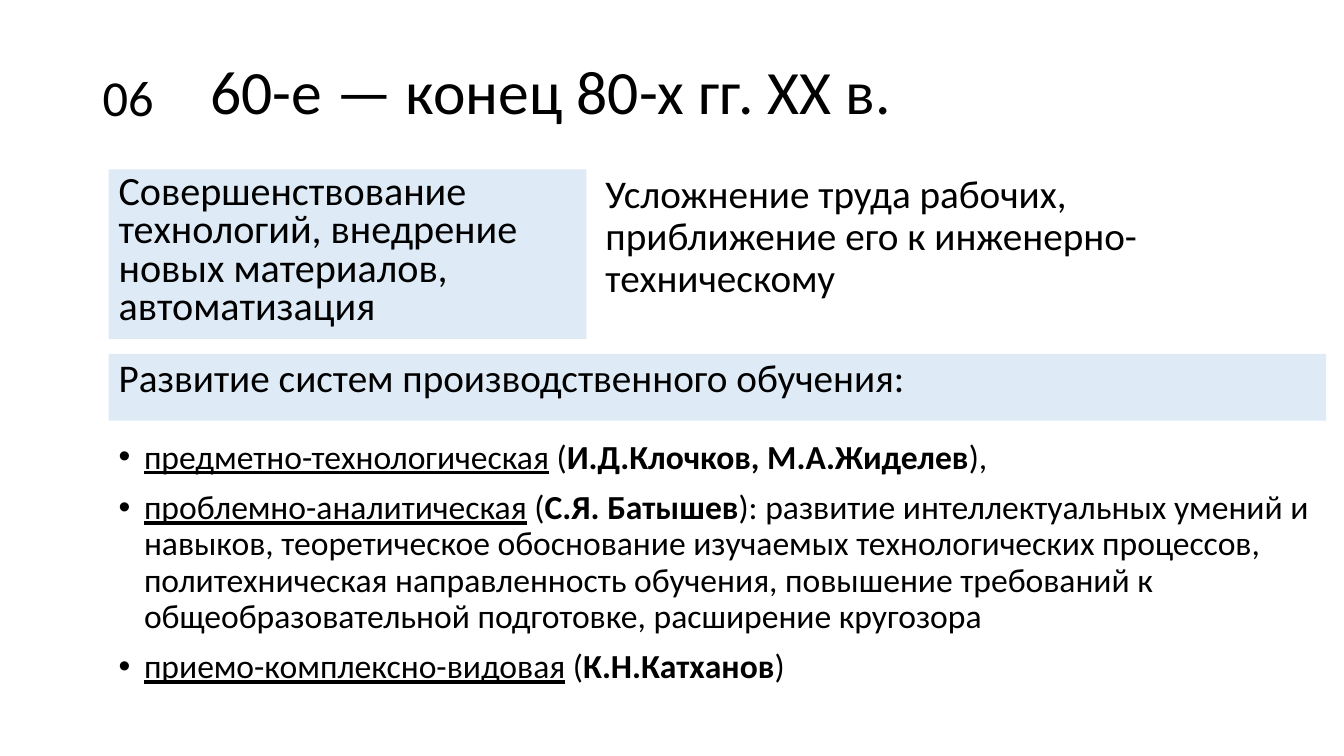
"""Build the slide on industrial training from the 1960s to the 1980s."""
from dataclasses import dataclass

from lxml import etree
from pptx import Presentation
from pptx.dml.color import RGBColor
from pptx.enum.shapes import MSO_SHAPE
from pptx.enum.text import MSO_ANCHOR, MSO_AUTO_SIZE, PP_ALIGN
from pptx.oxml.ns import qn
from pptx.util import Cm, Pt

RECT = MSO_SHAPE.RECTANGLE
TOP, MIDDLE = MSO_ANCHOR.TOP, MSO_ANCHOR.MIDDLE
LEFT = PP_ALIGN.LEFT
FIXED = MSO_AUTO_SIZE.NONE
TITLE_ONLY = 5


@dataclass(frozen=True)
class Theme:
    font: str = "Calibri"
    ink: RGBColor = RGBColor(0, 0, 0)
    band: RGBColor = RGBColor(0xDE, 0xEB, 0xF7)
    title: float = 44
    mark: float = 36
    lead: float = 28
    dense: float = 28.7
    item: float = 24


THEME = Theme()
EDGE = 2.74
ROW = 4.27
GAP = Pt(10)
PLAIN, UNDER, BOLD = {}, {"underline": True}, {"bold": True}

ITEMS = [
    ("предметно-технологическая", "И.Д.Клочков, М.А.Жиделев", "),"),
    ("проблемно-аналитическая", "С.Я. Батышев",
     "): развитие интеллектуальных умений и навыков, теоретическое "
     "обоснование изучаемых технологических процессов, политехническая "
     "направленность обучения, повышение требований к общеобразовательной "
     "подготовке, расширение кругозора"),
    ("приемо-комплексно-видовая", "К.Н.Катханов", ")"),
]


def apply(obj, values):
    """Set each named attribute of an object."""
    for name, value in values.items():
        setattr(obj, name, value)


def place(shape, left, top, width, height):
    """Move and size a shape in centimetres."""
    apply(shape, {"left": Cm(left), "top": Cm(top),
                  "width": Cm(width), "height": Cm(height)})


def frame(shape, anchor=TOP):
    """Return the shape's text frame, wrapped and fixed in size."""
    text = shape.text_frame
    apply(text, {"word_wrap": True, "auto_size": FIXED,
                 "vertical_anchor": anchor})
    return text


def write(para, parts, size, line=0.9, before=GAP):
    """Fill a paragraph with formatted runs."""
    apply(para, {"alignment": LEFT, "line_spacing": line,
                 "space_before": before})
    for words, style in parts:
        run = para.add_run()
        run.text = words
        apply(run.font, {"name": THEME.font, "size": Pt(size), **style})
        run.font.color.rgb = THEME.ink


def bullet(para):
    """Give a paragraph a hanging round bullet."""
    props = para._p.get_or_add_pPr()
    indent = Cm(0.64)
    props.set("marL", str(indent))
    props.set("indent", str(-indent))
    etree.SubElement(props, qn("a:buFont")).set("typeface", "Arial")
    etree.SubElement(props, qn("a:buChar")).set("char", "•")


def title(slide, words, box):
    """Move and fill the title placeholder."""
    shape = slide.shapes.title
    place(shape, *box)
    para = frame(shape, MIDDLE).paragraphs[0]
    write(para, [(words, PLAIN)], THEME.title, before=Pt(0))


def label(slide, words, box, size, **style):
    """Add a plain text box."""
    shape = slide.shapes.add_textbox(*map(Cm, box))
    write(frame(shape).paragraphs[0], [(words, PLAIN)], size, **style)


def panel(slide, words, box, size, **style):
    """Add a tinted box with text."""
    shape = slide.shapes.add_shape(RECT, *map(Cm, box))
    shape.shadow.inherit = False
    shape.fill.solid()
    shape.fill.fore_color.rgb = THEME.band
    shape.line.fill.background()
    write(frame(shape).paragraphs[0], [(words, PLAIN)], size, **style)


def listing(slide, items, box):
    """Add the bulleted list of training systems."""
    text = frame(slide.shapes.add_textbox(*map(Cm, box)))
    for index, (system, author, tail) in enumerate(items):
        para = text.add_paragraph() if index else text.paragraphs[0]
        parts = [(system, UNDER), (" (", PLAIN), (author, BOLD), (tail, PLAIN)]
        write(para, parts, THEME.item)
        bullet(para)


def main():
    """Build and save the slide."""
    deck = Presentation()
    apply(deck, {"slide_width": Cm(33.87), "slide_height": Cm(19.05)})
    slide = deck.slides.add_slide(deck.slide_layouts[TITLE_ONLY])
    title(slide, "60-е — конец 80-х гг. XX в.", (5.05, 1.02, 26.49, 2.72))
    panel(slide, "Развитие систем производственного обучения:",
          (EDGE, 8.92, 30.68, 1.68), THEME.lead)
    label(slide, "06", (2.34, 1.55, 2.72, 1.8), THEME.mark,
          line=1.0, before=Pt(0))
    label(slide, "Усложнение труда рабочих, приближение его к "
          "инженерно-техническому", (15.01, ROW, 18.14, ROW), THEME.lead)
    panel(slide, "Совершенствование технологий, внедрение новых материалов, "
          "автоматизация", (EDGE, ROW, 12.04, ROW), THEME.dense, line=0.8)
    listing(slide, ITEMS, (EDGE, 10.97, 31.12, 7.01))
    deck.save("out.pptx")


if __name__ == "__main__":
    main()
